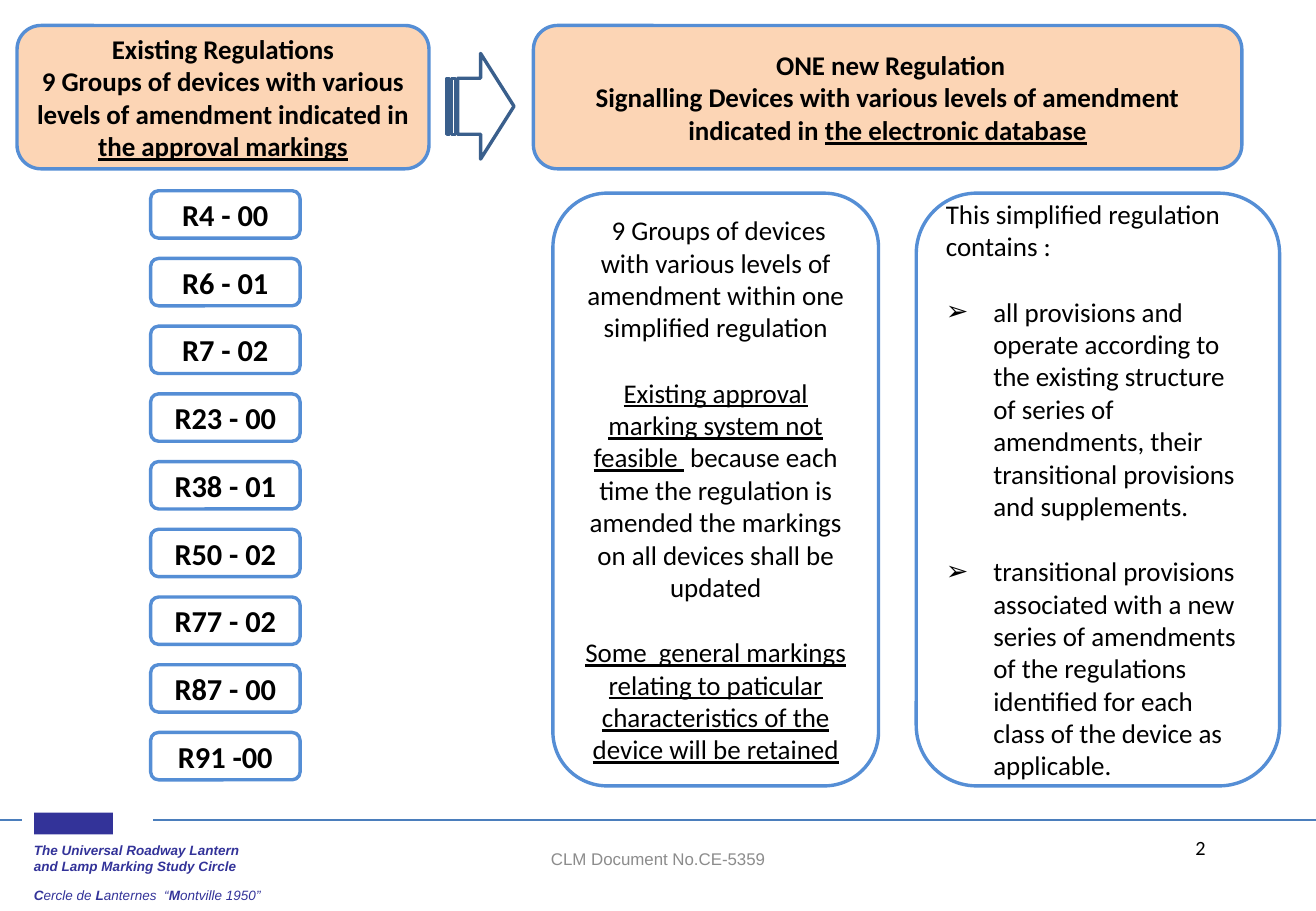
from dataclasses import dataclass

from lxml.etree import SubElement
from pptx import Presentation
from pptx.dml.color import RGBColor
from pptx.enum.shapes import MSO_CONNECTOR as Connector, MSO_SHAPE as Shape
from pptx.enum.text import MSO_ANCHOR as Anchor, PP_ALIGN as Align
from pptx.oxml.ns import qn
from pptx.util import Inches, Pt


@dataclass(frozen=True)
class Theme:
    black: str = "000000"
    white: str = "FFFFFF"
    peach: str = "FCD5B5"
    blue: str = "558ED5"
    arrow_blue: str = "3A5F8C"
    rule_blue: str = "4B7EBC"
    group_blue: str = "333399"
    grey: str = "8C8C8C"
    body_font: str = "Calibri"
    footer_font: str = "Arial"
    chip_size: float = 18
    body_size: float = 16
    number_size: float = 12
    footer_size: float = 10
    tagline_size: float = 8
    outline: float = 2
    hairline: float = 0.75
    blank_line: float = 19.5


class Page:
    def __init__(self, deck, theme):
        self.theme = theme
        self.shapes = deck.slides.add_slide(deck.slide_layouts[6]).shapes

    def box(self, place, kind=Shape.ROUNDED_RECTANGLE, fill=None, line=None, anchor=Anchor.MIDDLE):
        box = self.shapes.add_shape(kind, *map(Inches, place))
        box.shadow.inherit = False
        if fill:
            box.fill.solid()
            box.fill.fore_color.rgb = RGBColor.from_string(fill)
        else:
            box.fill.background()
        if line:
            box.line.color.rgb = RGBColor.from_string(line)
            box.line.width = Pt(self.theme.outline)
        else:
            box.line.fill.background()
        box.text_frame.word_wrap = True
        box.text_frame.vertical_anchor = anchor
        return box

    def label(self, place, text, anchor=Anchor.TOP, **style):
        box = self.shapes.add_textbox(*map(Inches, place))
        box.text_frame.word_wrap = True
        box.text_frame.vertical_anchor = anchor
        self.para(box, [text], **style)

    def para(self, box, spans, align=Align.CENTER, before=0, bullet=None, font=None,
             size=None, color=None, bold=False, italic=False):
        """Write one paragraph; a span is text or (text, {font attribute: value})."""
        frame = box.text_frame
        para = frame.add_paragraph() if frame.text else frame.paragraphs[0]
        if bullet:
            props = para._p.get_or_add_pPr()
            props.set("marL", str(Inches(0.39)))
            props.set("indent", str(-Inches(0.39)))
            SubElement(props, qn("a:buFont")).set("typeface", self.theme.footer_font)
            SubElement(props, qn("a:buChar")).set("char", bullet)
        para.alignment = align
        para.space_before = Pt(before)
        para.font.name = font or self.theme.body_font
        para.font.size = Pt(size or self.theme.body_size)
        para.font.color.rgb = RGBColor.from_string(color or self.theme.black)
        para.font.bold = bold
        para.font.italic = italic
        for span in spans:
            text, changes = (span, {}) if isinstance(span, str) else span
            for row, part in enumerate(text.split("\n")):
                if row:
                    para.add_line_break()
                run = para.add_run()
                run.text = part
                for name, value in changes.items():
                    setattr(run.font, name, value)

    def rule(self, left, right, top):
        line = self.shapes.add_connector(
            Connector.STRAIGHT, Inches(left), Inches(top), Inches(right), Inches(top))
        line.line.color.rgb = RGBColor.from_string(self.theme.rule_blue)
        line.line.width = Pt(self.theme.hairline)
        SubElement(line._element.spPr, qn("a:effectLst"))


UNDERLINE = {"underline": True}
BOLD = {"bold": True}
HEADERS = [
    ((0.14, 0.21, 3.39, 1.18), "Existing Regulations",
     "9 Groups of devices with various levels of amendment indicated in ",
     "the approval markings"),
    ((4.39, 0.21, 5.83, 1.18), " ONE new Regulation",
     "Signalling Devices with various levels of amendment indicated in ",
     "the electronic database"),
]
REGULATIONS = ["R4 - 00", "R6 - 01", "R7 - 02", "R23 - 00", "R38 - 01",
               "R50 - 02", "R77 - 02", "R87 - 00", "R91 -00"]
FIRST_CHIP, LAST_CHIP = 1.57, 6.03
GROUPS = [
    [" 9 Groups of devices with various levels of amendment within one simplified regulation"],
    [("Existing approval marking system not feasible ", UNDERLINE),
     " because each time the regulation is amended the markings on all devices shall be updated"],
    [("Some  general markings relating to paticular characteristics of the device "
      "will be retained", UNDERLINE)],
]
PROVISIONS = [
    "all provisions and operate according to the existing structure of series of "
    "amendments, their transitional provisions and supplements.",
    "transitional provisions associated with a new series of amendments of the "
    "regulations identified for each class of the device as applicable.",
]


def main():
    theme = Theme()
    deck = Presentation()
    deck.slide_width, deck.slide_height = Inches(10.83), Inches(7.5)
    page = Page(deck, theme)

    for place, heading, text, source in HEADERS:
        header = page.box(place, fill=theme.peach, line=theme.blue)
        page.para(header, [heading], bold=True)
        page.para(header, [text, (source, UNDERLINE)], bold=True)

    arrow = page.box((3.68, 0.44, 0.55, 0.87), Shape.STRIPED_RIGHT_ARROW,
                     theme.white, theme.arrow_blue)
    arrow.adjustments[0] = 0.53

    pitch = (LAST_CHIP - FIRST_CHIP) / (len(REGULATIONS) - 1)
    for row, regulation in enumerate(REGULATIONS):
        chip = page.box((1.24, FIRST_CHIP + row * pitch, 1.23, 0.39), line=theme.blue)
        page.para(chip, [regulation], size=theme.chip_size, bold=True)

    groups = page.box((4.55, 1.59, 2.68, 4.88), line=theme.blue)
    for row, spans in enumerate(GROUPS):
        page.para(groups, spans, before=theme.blank_line if row else 0)

    contents = page.box((7.54, 1.59, 2.99, 4.88), line=theme.blue)
    page.para(contents, ["This simplified regulation contains :"], Align.LEFT)
    for provision in PROVISIONS:
        page.para(contents, [provision], Align.LEFT, theme.blank_line, "➢")

    page.box((0.28, 6.69, 0.65, 0.18), Shape.RECTANGLE, theme.group_blue)
    tagline = page.box((0.18, 6.88, 2.53, 0.62), Shape.RECTANGLE, theme.white, anchor=Anchor.TOP)
    style = dict(align=Align.LEFT, font=theme.footer_font, size=theme.tagline_size,
                 color=theme.group_blue, italic=True)
    page.para(tagline, ["The Universal Roadway Lantern\nand Lamp Marking Study Circle"],
              bold=True, **style)
    page.para(tagline, [("C", BOLD), "ercle de ", ("L", BOLD), "anternes  “", ("M", BOLD),
                        "ontville 1950”"], before=8, **style)

    page.rule(1.26, 10.83, 6.75)
    page.rule(0, 0.18, 6.75)
    page.label((7.76, 6.83, 2.26, 0.5), "2", align=Align.RIGHT, size=theme.number_size)
    page.label((3.7, 6.82, 3.43, 0.5), "CLM Document No.CE-5359", Anchor.MIDDLE,
               font=theme.footer_font, size=theme.footer_size, color=theme.grey)

    deck.save("out.pptx")


if __name__ == "__main__":
    main()
